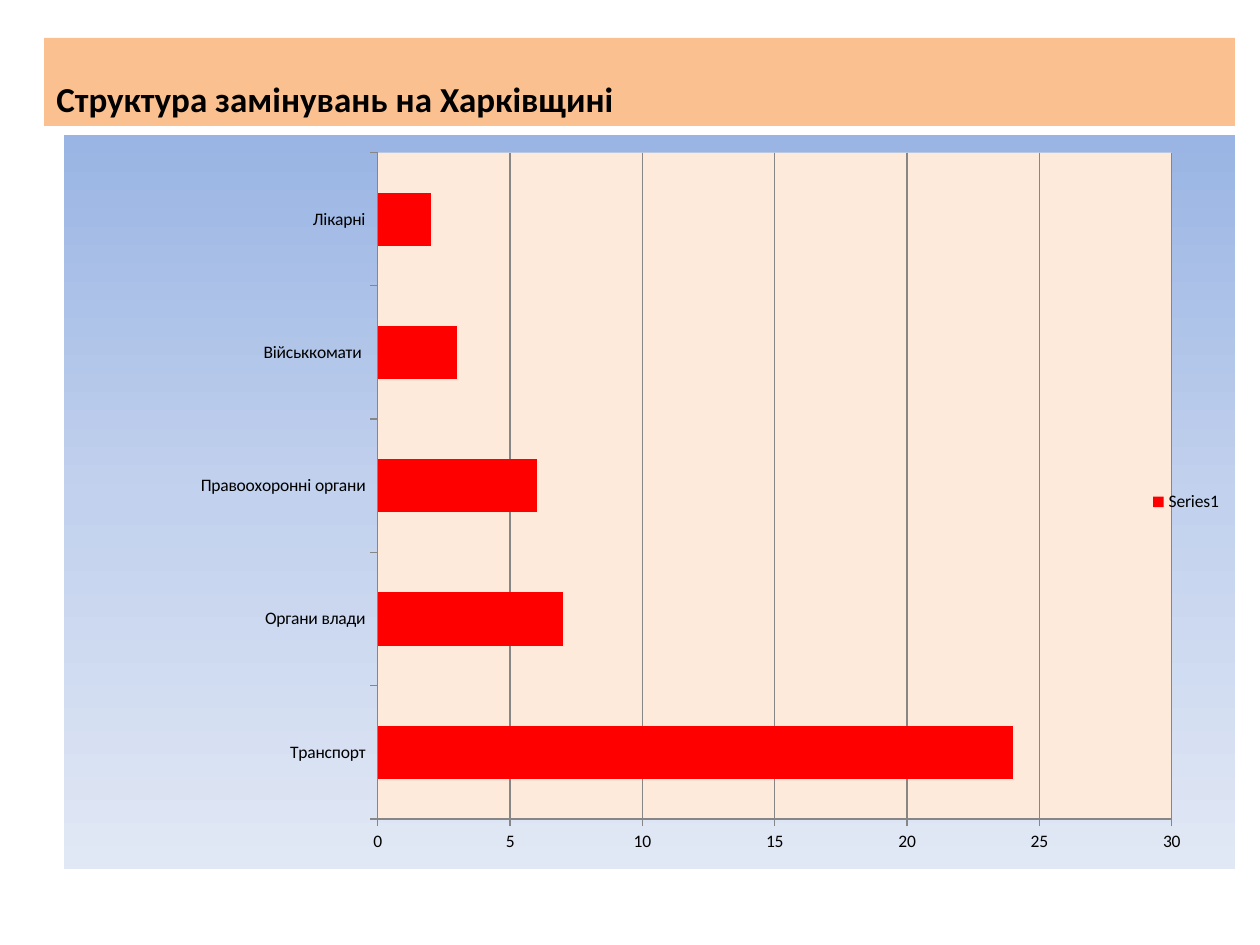
from lxml.etree import SubElement
from pptx import Presentation
from pptx.chart.data import CategoryChartData
from pptx.dml.color import RGBColor
from pptx.enum.chart import XL_CHART_TYPE, XL_LEGEND_POSITION, XL_TICK_MARK
from pptx.enum.shapes import MSO_SHAPE
from pptx.enum.text import MSO_ANCHOR, PP_ALIGN
from pptx.oxml import parse_xml
from pptx.oxml.ns import nsdecls, qn
from pptx.util import Pt

PX = 914400 / 126


def px(*lengths):
    return [round(length * PX) for length in lengths]


def paint(color_format, hex_color):
    color_format.rgb = RGBColor.from_string(hex_color)


deck = Presentation()
deck.slide_width, deck.slide_height = px(1260, 945)
slide = deck.slides.add_slide(deck.slide_layouts[6])

# Title band
band = slide.shapes.add_shape(MSO_SHAPE.RECTANGLE, *px(44, 38, 1191, 88))
band.shadow.inherit = False
band.fill.solid()
paint(band.fill.fore_color, "FAC090")
band.line.fill.background()
frame = band.text_frame
frame.word_wrap = True
frame.vertical_anchor = MSO_ANCHOR.BOTTOM
para = frame.paragraphs[0]
para.text = "Структура замінувань на Харківщині"
para.alignment = PP_ALIGN.LEFT
para.font.name = "Calibri"
para.font.size = Pt(20)
para.font.bold = True
paint(para.font.color, "000000")

# Bar chart
data = CategoryChartData()
data.categories = ["Транспорт", "Органи влади", "Правоохоронні органи",
                   "Військкомати ", "Лікарні"]
data.add_series("Series1", [24, 7, 6, 3, 2])
chart = slide.shapes.add_chart(
    XL_CHART_TYPE.BAR_CLUSTERED, *px(64, 135, 1171, 734), data).chart
chart.has_title = False
chart.font.name = "Calibri"
chart.font.size = Pt(10)
paint(chart.font.color, "000000")

plot = chart.plots[0]
plot.vary_by_categories = False
plot.gap_width = 150
bars = plot.series[0].format.fill
bars.solid()
paint(bars.fore_color, "FF0000")

# Axes and gridlines
values = chart.value_axis
values.minimum_scale, values.maximum_scale, values.major_unit = 0, 30, 5
values.has_major_gridlines = True
chart.category_axis.has_major_gridlines = False
for axis in (values, chart.category_axis):
    axis.major_tick_mark = XL_TICK_MARK.OUTSIDE
    axis.minor_tick_mark = XL_TICK_MARK.NONE
for lined in (values, chart.category_axis, values.major_gridlines):
    lined.format.line.width = Pt(0.75)
    paint(lined.format.line.color, "868686")

# Legend
chart.has_legend = True
chart.legend.position = XL_LEGEND_POSITION.RIGHT
chart.legend.include_in_layout = False

# Plot area position
chart_space = chart.element
plot_area = chart_space.find(".//" + qn("c:plotArea"))
layout = plot_area.find(qn("c:layout"))
if layout is None:
    layout = parse_xml(f"<c:layout {nsdecls('c')}/>")
    plot_area.insert(0, layout)
manual = SubElement(layout, qn("c:manualLayout"))
for tag, value in [("layoutTarget", "inner"), ("xMode", "edge"), ("yMode", "edge"),
                   ("x", "0.268"), ("y", "0.024"), ("w", "0.678"), ("h", "0.908")]:
    SubElement(manual, qn(f"c:{tag}")).set("val", value)

# Plot area fill and chart background gradient
plot_area.append(parse_xml(
    f'<c:spPr {nsdecls("c", "a")}><a:solidFill><a:srgbClr val="FDEADA"/>'
    '</a:solidFill><a:ln><a:noFill/></a:ln></c:spPr>'))
stops = "".join(
    f'<a:gs pos="{percent * 1000}"><a:srgbClr val="{color}"/></a:gs>'
    for percent, color in [(0, "9AB5E4"), (50, "C2D1ED"), (100, "E1E8F5")])
chart_space.find(qn("c:chart")).addnext(parse_xml(
    f'<c:spPr {nsdecls("c", "a")}><a:gradFill><a:gsLst>{stops}</a:gsLst>'
    '<a:lin ang="5400000" scaled="0"/></a:gradFill>'
    '<a:ln><a:noFill/></a:ln></c:spPr>'))

deck.save("out.pptx")
